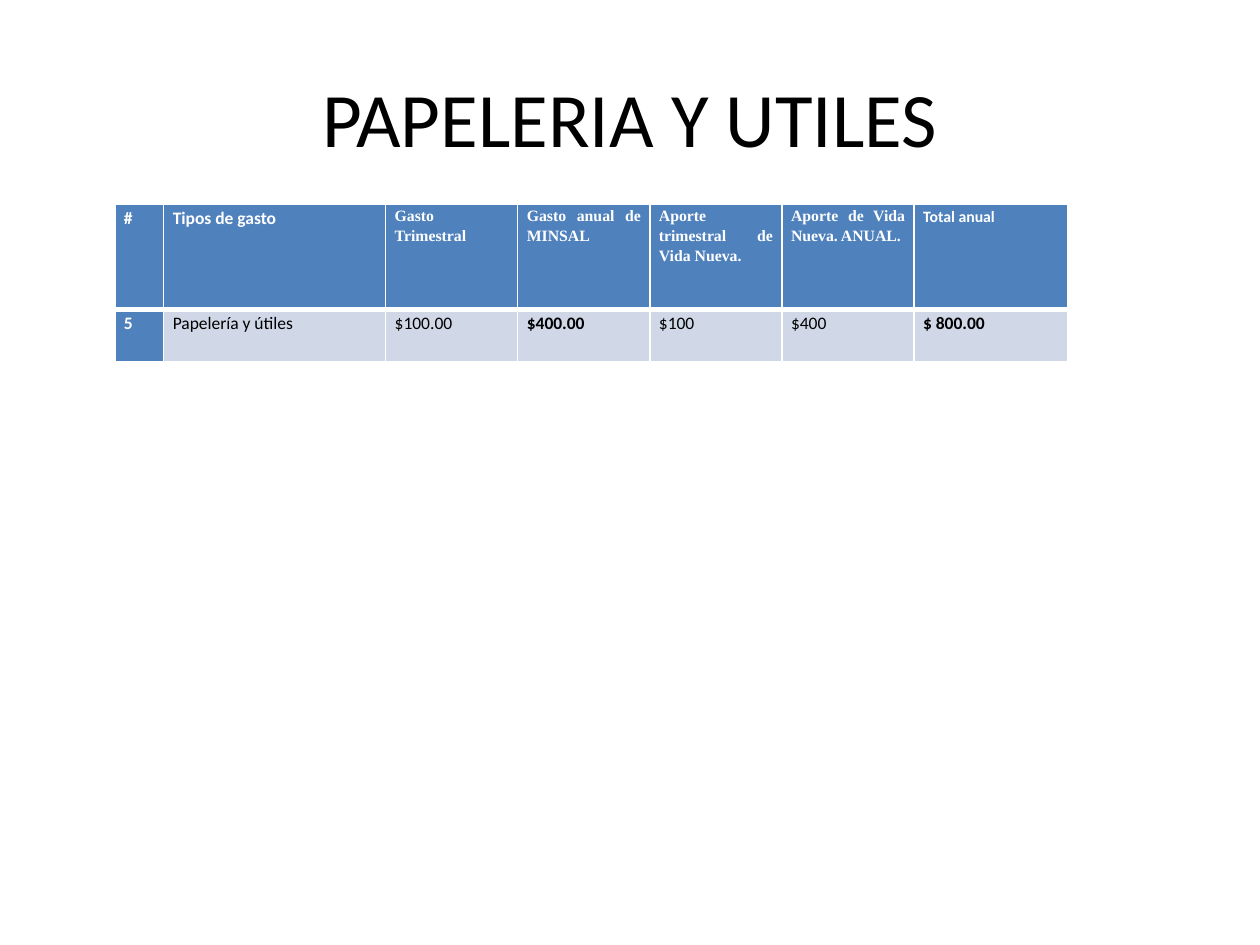
"""Build the stationery expense slide with its yearly cost table."""
from dataclasses import dataclass

from lxml import etree
from pptx import Presentation
from pptx import util as u
from pptx.dml.color import RGBColor
from pptx.enum import text
from pptx.oxml import ns

Pt = u.Pt
LEFT = text.PP_ALIGN.LEFT
FULL = text.PP_ALIGN.JUSTIFY


@dataclass(frozen=True)
class Theme:
    sans: str = "Calibri"
    serif: str = "Times New Roman"
    white: str = "FFFFFF"
    black: str = "000000"
    blue: str = "4F81BD"
    pale: str = "D0D8E8"
    title: float = 44
    body: float = 10
    small: float = 9
    thin: float = 1
    thick: float = 3


THEME = Theme()
WIDTHS = [28, 126.8, 75.5, 75.5, 75.5, 75.5, 87.8]
HEIGHTS = [60.2, 29.7]
HEADS = ["#", "Tipos de gasto", "Gasto Trimestral", "Gasto anual de MINSAL",
         "Aporte trimestral de Vida Nueva.", "Aporte de Vida Nueva. ANUAL.",
         "Total anual"]
COSTS = ["5", "Papelería y útiles", "$100.00", "$400.00", "$100", "$400",
         "$ 800.00"]
BOLD = {0, 3, 6}


def style(para, size, color, face=THEME.sans, bold=False, align=LEFT):
    para.alignment = align
    font = para.font
    font.name, font.size, font.bold = face, Pt(size), bold
    font.color.rgb = RGBColor.from_string(color)


def edge(cell, side, width):
    props = cell._tc.get_or_add_tcPr()
    line = etree.SubElement(props, ns.qn("a:ln" + side), w=str(Pt(width)))
    fill = etree.SubElement(line, ns.qn("a:solidFill"))
    etree.SubElement(fill, ns.qn("a:srgbClr"), val=THEME.white)


def paint(cell, words, fill, **look):
    cell.margin_left = cell.margin_right = Pt(5.2)
    cell.margin_top = cell.margin_bottom = 0
    cell.fill.solid()
    cell.fill.fore_color.rgb = RGBColor.from_string(fill)
    cell.text = words
    para = cell.text_frame.paragraphs[0]
    para.line_spacing = 1.15
    style(para, **look)


def add_title(slide, words):
    box = slide.shapes.add_textbox(Pt(36), Pt(21.6), Pt(648), Pt(90))
    frame = box.text_frame
    frame.word_wrap = True
    frame.vertical_anchor = text.MSO_ANCHOR.MIDDLE
    frame.text = words
    style(frame.paragraphs[0], THEME.title, THEME.black,
          align=text.PP_ALIGN.CENTER)


def add_costs(slide):
    frame = slide.shapes.add_table(2, len(WIDTHS), Pt(65.6), Pt(116.8),
                                   Pt(sum(WIDTHS)), Pt(sum(HEIGHTS)))
    table = frame.table
    for row, height in zip(table.rows, HEIGHTS):
        row.height = Pt(height)
    for i, (width, head, cost) in enumerate(zip(WIDTHS, HEADS, COSTS)):
        table.columns[i].width = Pt(width)
        top, low = table.cell(0, i), table.cell(1, i)
        for cell, heavy in ((top, "B"), (low, "T")):
            for side in "LRTB":
                edge(cell, side, THEME.thick if side == heavy else THEME.thin)
        paint(top, head, THEME.blue, color=THEME.white, bold=True, align=FULL,
              size=THEME.body if i < 2 else THEME.small,
              face=THEME.serif if 2 <= i <= 5 else THEME.sans)
        paint(low, cost, THEME.pale if i else THEME.blue, size=THEME.body,
              color=THEME.black if i else THEME.white, bold=i in BOLD,
              align=LEFT if 2 <= i <= 5 else FULL)


def main():
    deck = Presentation()
    deck.slide_width, deck.slide_height = Pt(720), Pt(540)
    slide = deck.slides.add_slide(deck.slide_layouts[6])
    add_title(slide, "PAPELERIA Y UTILES")
    add_costs(slide)
    deck.save("out.pptx")


if __name__ == "__main__":
    main()
